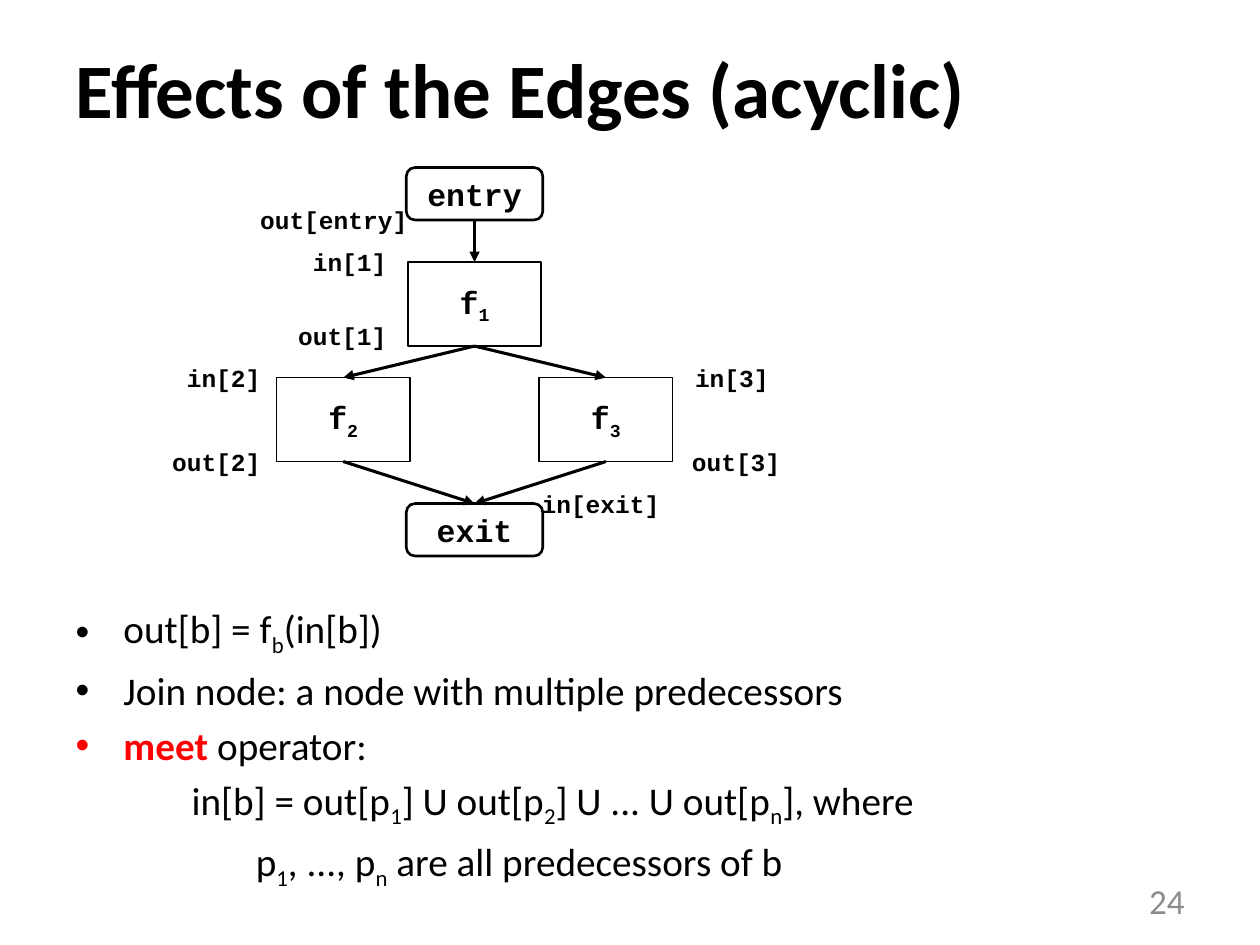
import pptx
import pptx.util
import pptx.dml.color
import pptx.enum.shapes
import pptx.enum.text
import pptx.oxml.ns
from lxml import etree

In, Pt = pptx.util.Inches, pptx.util.Pt
SHAPE = pptx.enum.shapes.MSO_SHAPE
ALIGN = pptx.enum.text.PP_ALIGN
ANCHOR = pptx.enum.text.MSO_ANCHOR
FIT = pptx.enum.text.MSO_AUTO_SIZE
SANS, MONO = "Calibri", "Courier New"
BLACK, RED, GREY = "000000", "FF0000", "8C8C8C"
UNIT = 1 / 12
CHAR = 0.117


def rgb(color):
    """Turn a hex string into a colour."""
    return pptx.dml.color.RGBColor.from_string(color)


def sub(parent, tag, **attrs):
    """Append a DrawingML child element."""
    return etree.SubElement(parent, pptx.oxml.ns.qn(tag), **attrs)


def place(sp, box):
    """Move a shape to a box in inches."""
    sp.left, sp.top, sp.width, sp.height = map(In, box)


def style(p, size, name, color=BLACK, bold=False, align=ALIGN.LEFT):
    """Format a whole paragraph."""
    p.font.size, p.font.name, p.font.bold = Pt(size), name, bold
    p.font.color.rgb = rgb(color)
    p.alignment = align


def add_marked(p, text):
    """Add runs in which ~x~ marks a subscript."""
    for i, part in enumerate(text.split("~")):
        if part:
            r = p.add_run()
            r.text = part
            if i % 2:
                r._r.get_or_add_rPr().set("baseline", "-25000")


def add_text(slide, box, text, size, name, color=BLACK, bold=False,
             wrap=False, anchor=ANCHOR.TOP):
    """Add a right-aligned line of text."""
    tf = slide.shapes.add_textbox(*map(In, box)).text_frame
    tf.word_wrap, tf.vertical_anchor = wrap, anchor
    p = tf.paragraphs[0]
    add_marked(p, text)
    style(p, size, name, color, bold, ALIGN.RIGHT)


def add_node(slide, kind, box, text, weight):
    """Add an outlined flow-graph node with its name."""
    sp = slide.shapes.add_shape(kind, *map(In, box))
    sp.shadow.inherit = False
    sp.fill.background()
    sp.line.color.rgb = rgb(BLACK)
    sp.line.width = Pt(weight)
    tf = sp.text_frame
    tf.word_wrap, tf.vertical_anchor = False, ANCHOR.MIDDLE
    p = tf.paragraphs[0]
    add_marked(p, text)
    style(p, 18, MONO, bold=True, align=ALIGN.CENTER)


def add_edge(slide, start, end):
    """Add an arrow between two points."""
    s = slide.shapes.add_connector(pptx.enum.shapes.MSO_CONNECTOR.STRAIGHT,
                                   *map(In, start + end))
    s.line.color.rgb = rgb(BLACK)
    s.line.width = Pt(1.75)
    sub(s.line._get_or_add_ln(), "a:tailEnd", type="triangle")
    sub(s._element.spPr, "a:effectLst")


def add_title(slide, box, text):
    """Fill the title placeholder."""
    sp = slide.shapes.title
    place(sp, box)
    sp.text_frame.vertical_anchor = ANCHOR.MIDDLE
    p = sp.text_frame.paragraphs[0]
    add_marked(p, text)
    style(p, 44, SANS, bold=True)


def add_flow_graph(slide, left, top):
    """Draw the flow graph on a grid that starts at left, top."""
    def at(col, row):
        return left + col * UNIT, top + row * UNIT

    mid, pitch = 30.2, 12.5
    nodes = {
        "entry": (mid, 0, 5), "f~1~": (mid, 9, 8),
        "f~2~": (mid - pitch, 20, 8), "f~3~": (mid + pitch, 20, 8),
        "exit": (mid, 32, 5),
    }
    for name, (col, row, rows) in nodes.items():
        block = "~" in name
        cols = 12.7 if block else 13
        box = at(col - cols / 2, row) + (cols * UNIT, rows * UNIT)
        kind = SHAPE.RECTANGLE if block else SHAPE.ROUNDED_RECTANGLE
        add_node(slide, kind, box, name, 1 if block else 1.5)

    edges = [("entry", "f~1~"), ("f~1~", "f~2~"), ("f~1~", "f~3~"),
             ("f~2~", "exit"), ("f~3~", "exit")]
    for source, target in edges:
        col, row, rows = nodes[source]
        add_edge(slide, at(col, row + rows), at(*nodes[target][:2]))

    labels = [("out[entry]", 25, 3), ("in[1]", 23, 7), ("out[1]", 23, 14),
              ("in[2]", 11, 18), ("out[2]", 11, 26), ("in[3]", 59.4, 18),
              ("out[3]", 60.5, 26), ("in[exit]", 49, 30)]
    for text, right, row in labels:
        width = CHAR * len(text) + 0.2
        x, y = at(right, row)
        add_text(slide, (x - width, y, width, 4 * UNIT), text, 14, MONO, bold=True)


def add_body(slide, box, lines):
    """Fill the body placeholder with bullets and indented formulas."""
    sp = slide.placeholders[1]
    place(sp, box)
    tf = sp.text_frame
    tf.auto_size = FIT.NONE
    for i, (text, indent, key) in enumerate(lines):
        p = tf.add_paragraph() if i else tf.paragraphs[0]
        if key:
            r = p.add_run()
            r.text = key
            r.font.bold, r.font.color.rgb = True, rgb(RED)
        add_marked(p, text)
        style(p, 22.4, SANS)
        pPr = p._p.get_or_add_pPr()
        pPr.set("marL", str(In(indent or 0.38)))
        pPr.set("indent", str(0 if indent else In(-0.38)))
        if indent:
            pPr.insert(0, sub(pPr, "a:buNone"))


def main():
    """Build the slide."""
    prs = pptx.Presentation()
    prs.slide_width, prs.slide_height = In(10), In(7.5)
    slide = prs.slides.add_slide(prs.slide_layouts[1])
    add_title(slide, (0.5, 0.07, 9, 1.25), "Effects of the Edges (acyclic)")
    add_flow_graph(slide, 1.25, 1.33)
    add_body(slide, (0.5, 4.75, 9, 1.92), [
        ("out[b] = f~b~(in[b])", 0, ""),
        ("Join node: a node with multiple predecessors", 0, ""),
        (" operator:", 0, "meet"),
        ("in[b] = out[p~1~] U out[p~2~] U ... U out[p~n~], where", 0.92, ""),
        ("p~1~, ..., p~n~ are all predecessors of b", 1.43, ""),
    ])
    add_text(slide, (7.17, 6.95, 2.33, 0.4), "24", 20, SANS, GREY,
             wrap=True, anchor=ANCHOR.MIDDLE)
    prs.save("out.pptx")


if __name__ == "__main__":
    main()
